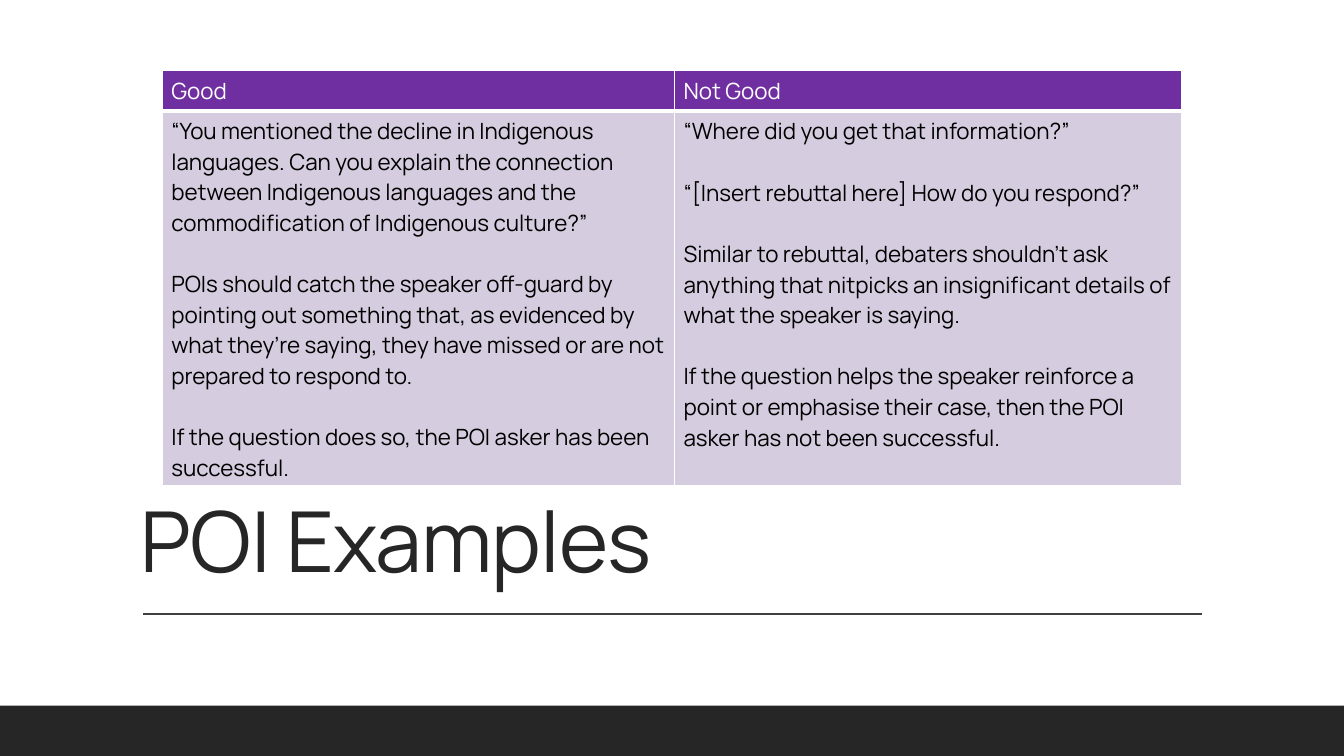
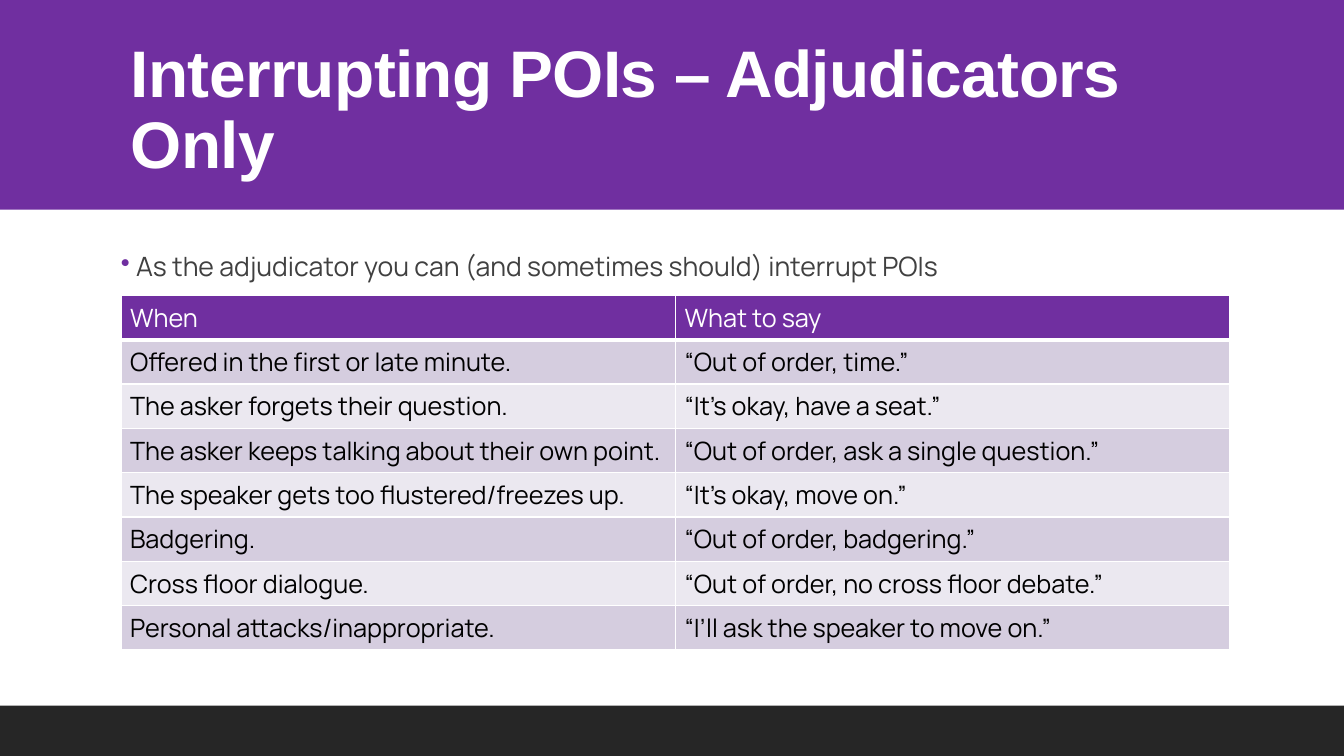
from lxml import etree
from pptx import Presentation
from pptx import util as u
from pptx.dml import color
from pptx.enum import shapes, text
from pptx.oxml import ns

Inches, Pt = u.Inches, u.Pt
WIDTH, HEIGHT = 13.33, 7.5
PURPLE, LILAC, PALE = "702FA0", "D5CDDF", "EBE8F0"
WHITE, BLACK, DARK, GREY = "FFFFFF", "000000", "262626", "404040"
FONT = "Manrope"
FOOTER_HEIGHT = 0.5
LINE_GAP = 22  # one text line of the 16 pt table

EXAMPLES = [
    ["Good", "Not Good"],
    [
        [
            "“You mentioned the decline in Indigenous languages. Can you explain "
            "the connection between Indigenous languages and the commodification "
            "of Indigenous culture?”",
            "POIs should catch the speaker off-guard by pointing out something "
            "that, as evidenced by what they’re saying, they have missed or are "
            "not prepared to respond to.",
            "If the question does so, the POI asker has been successful.",
        ],
        [
            "“Where did you get that information?”",
            "“[Insert rebuttal here] How do you respond?”",
            "Similar to rebuttal, debaters shouldn’t ask anything that nitpicks "
            "an insignificant details of what the speaker is saying.",
            "If the question helps the speaker reinforce a point or emphasise "
            "their case, then the POI asker has not been successful.",
        ],
    ],
]
INTERRUPTIONS = [
    ["When", "What to say"],
    ["Offered in the first or late minute.", "“Out of order, time.”"],
    ["The asker forgets their question.", "“It’s okay, have a seat.”"],
    ["The asker keeps talking about their own point.",
     "“Out of order, ask a single question.”"],
    ["The speaker gets too flustered/freezes up.", "“It’s okay, move on.”"],
    ["Badgering.", "“Out of order, badgering.”"],
    ["Cross floor dialogue.", "“Out of order, no cross floor debate.”"],
    ["Personal attacks/inappropriate.", "“I’ll ask the speaker to move on.”"],
]


def rgb(value):
    return color.RGBColor.from_string(value)


def set_all(target, values):
    for name, value in values.items():
        setattr(target, name, value)


def add_span(para, words, size, colour, font=FONT, bold=False):
    span = para.add_run()
    span.text = words
    set_all(span.font, {"name": font, "size": Pt(size), "bold": bold})
    span.font.color.rgb = rgb(colour)
    return span


def add_band(page, top, height, colour):
    """Full-width bar."""
    band = page.shapes.add_shape(
        shapes.MSO_SHAPE.RECTANGLE, 0, Inches(top), Inches(WIDTH), Inches(height))
    band.shadow.inherit = False
    band.fill.solid()
    band.fill.fore_color.rgb = rgb(colour)
    band.line.fill.background()


def add_text_box(page, box, **frame_format):
    frame = page.shapes.add_textbox(*map(Inches, box)).text_frame
    set_all(frame, {"word_wrap": True, **frame_format})
    return frame


def add_title(page, box, words, anchor, **style):
    frame = add_text_box(page, box, vertical_anchor=anchor)
    para = frame.paragraphs[0]
    para.line_spacing = 0.9
    span = add_span(para, words, **style)
    span.font._element.set("spc", "-50")


def add_bullet(page, box, words):
    frame = add_text_box(page, box, margin_left=0, margin_right=0)
    para = frame.paragraphs[0]
    props = para._p.get_or_add_pPr()
    hang = Inches(0.15)
    props.set("marL", str(hang))
    props.set("indent", str(-hang))
    set_all(para, {"line_spacing": 1.1, "space_after": Pt(2)})
    bullet_colour = etree.SubElement(props, ns.qn("a:buClr"))
    etree.SubElement(bullet_colour, ns.qn("a:srgbClr"), val=PURPLE)
    etree.SubElement(props, ns.qn("a:buChar"), char="•")
    add_span(para, words, 19, GREY)


def add_rule(page, left, top, width):
    rule = page.shapes.add_connector(
        shapes.MSO_CONNECTOR.STRAIGHT,
        *map(Inches, (left, top, left + width, top)))
    rule.line.color.rgb = rgb(GREY)
    rule.line.width = Pt(1)
    etree.SubElement(rule._element.spPr, ns.qn("a:effectLst"))


def set_borders(cell, bottom):
    """White cell edges; they must stand before the fill in the XML."""
    props = cell._tc.get_or_add_tcPr()
    widths = {"lnL": 1, "lnR": 1, "lnT": 1, "lnB": bottom}
    for index, (tag, width) in enumerate(widths.items()):
        edge = etree.Element(ns.qn("a:" + tag), w=str(Pt(width)))
        fill = etree.SubElement(edge, ns.qn("a:solidFill"))
        etree.SubElement(fill, ns.qn("a:srgbClr"), val=WHITE)
        props.insert(index, edge)


def fill_cell(cell, content, size, is_header, fill):
    cell.fill.solid()
    cell.fill.fore_color.rgb = rgb(fill)
    set_borders(cell, 3 if is_header else 1)
    set_all(cell, {"margin_left": Inches(0.09), "margin_right": Inches(0.09)})
    frame = cell.text_frame
    lines = [content] if isinstance(content, str) else content
    for index, words in enumerate(lines):
        para = frame.add_paragraph() if index else frame.paragraphs[0]
        if index:
            para.space_before = Pt(LINE_GAP)
        add_span(para, words, size, WHITE if is_header else BLACK)


def add_grid(page, left, top, widths, heights, rows, size):
    """Table with a purple header row and banded body rows."""
    table = page.shapes.add_table(
        len(rows), len(widths), Inches(left), Inches(top),
        Inches(sum(widths)), Inches(sum(heights))).table
    for column, width in zip(table.columns, widths):
        column.width = Inches(width)
    for index, (row, height) in enumerate(zip(rows, heights)):
        table.rows[index].height = Inches(height)
        fill = PURPLE if index == 0 else LILAC if index % 2 else PALE
        for column, content in enumerate(row):
            fill_cell(table.cell(index, column), content, size, index == 0, fill)


def add_page(deck):
    page = deck.slides.add_slide(deck.slide_layouts[6])
    add_band(page, HEIGHT - FOOTER_HEIGHT, FOOTER_HEIGHT, DARK)
    return page


def build_examples(deck):
    page = add_page(deck)
    add_title(page, (1.3, 4.78, 10.74, 1.13), "POI Examples",
              text.MSO_ANCHOR.BOTTOM, size=60, colour=DARK)
    add_rule(page, 1.42, 6.09, 10.5)
    add_grid(page, 1.61, 0.7, [5.08, 5.03], [0.4, 3.72], EXAMPLES, 16)


def build_interruptions(deck):
    page = add_page(deck)
    left, width = 1.2, 11
    add_band(page, 0, 2.08, PURPLE)
    add_title(page, (left, 0.31, width, 1.59),
              "Interrupting POIs – Adjudicators Only", text.MSO_ANCHOR.MIDDLE,
              size=47, colour=WHITE, font="Arial", bold=True)
    add_bullet(page, (left, 2.4, width, 0.5),
               "As the adjudicator you can (and sometimes should) interrupt POIs")
    add_grid(page, left, 2.93, [width / 2] * 2, [0.44] * len(INTERRUPTIONS),
             INTERRUPTIONS, 18)


def main():
    deck = Presentation()
    set_all(deck, {"slide_width": Inches(WIDTH), "slide_height": Inches(HEIGHT)})
    build_examples(deck)
    build_interruptions(deck)
    deck.save("out.pptx")


if __name__ == "__main__":
    main()
